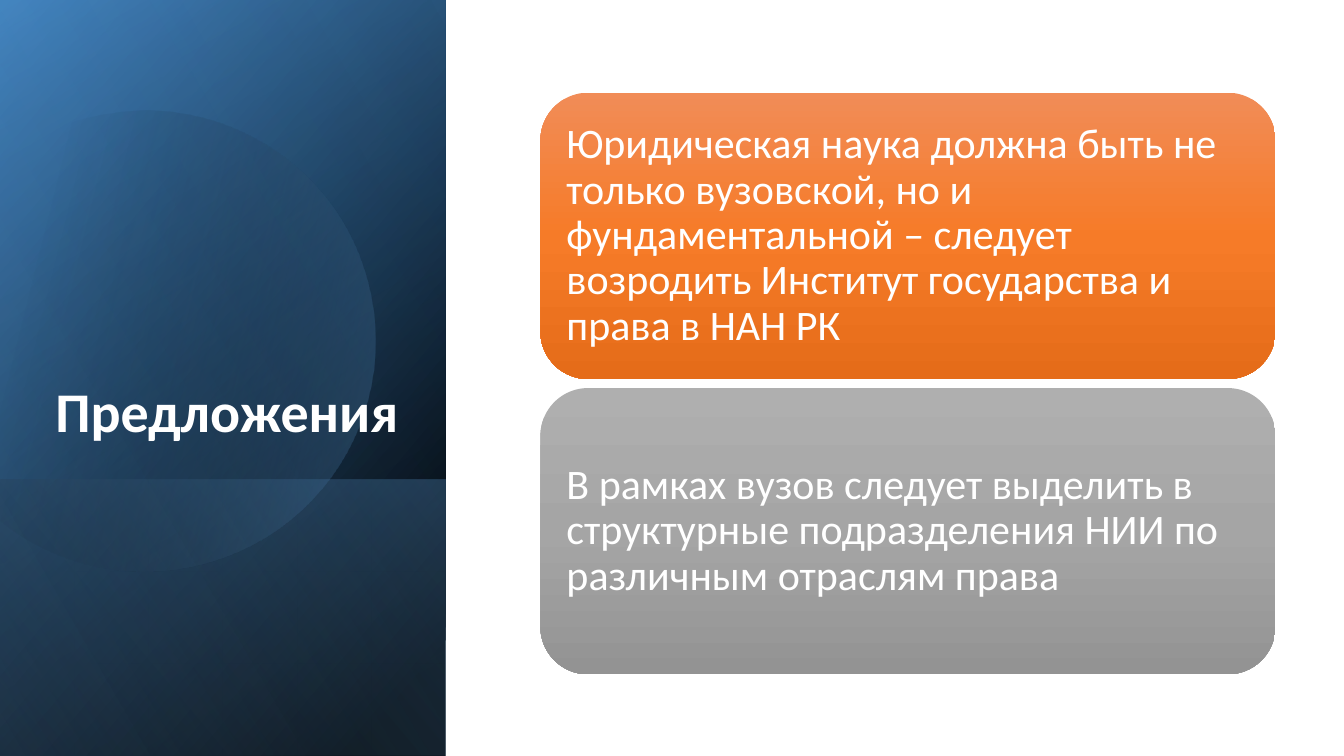
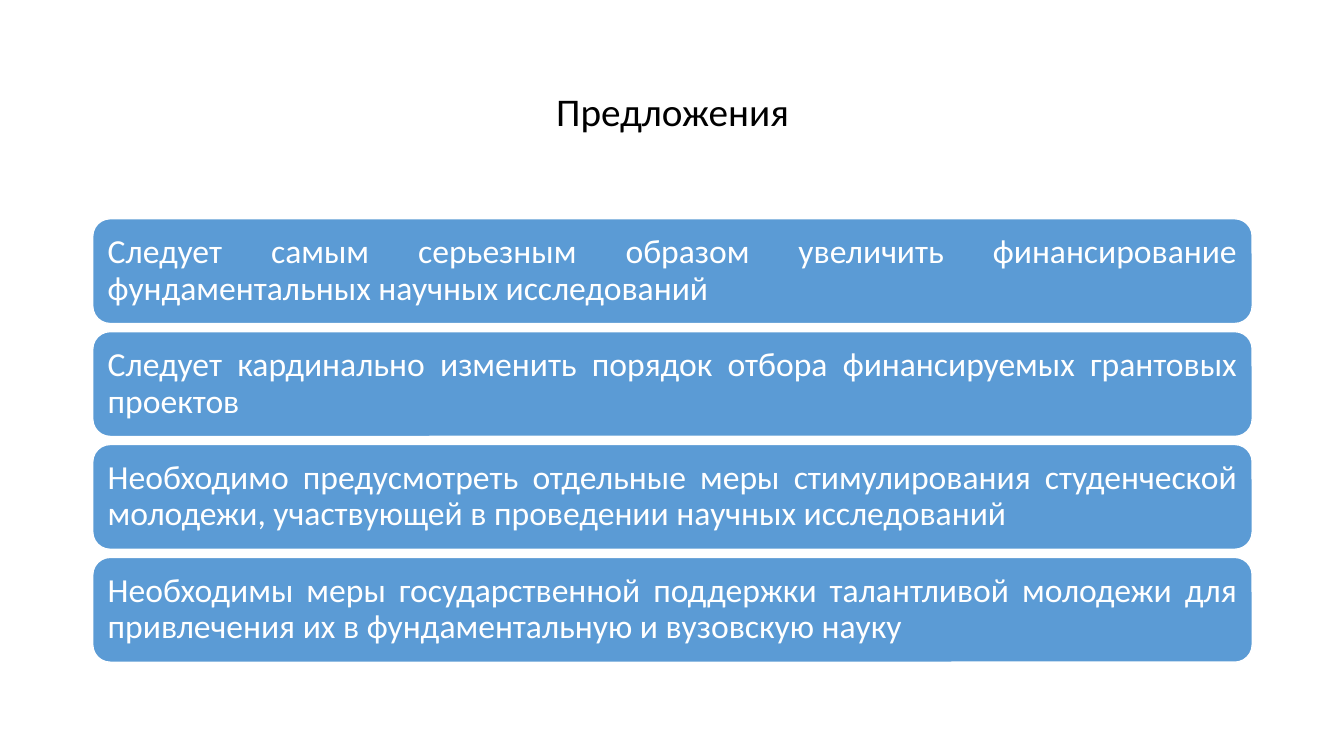
"""Build two slides of proposals: a decorated title panel with cards, and a stack of rows."""
from dataclasses import dataclass
from math import cos, radians, sin

from lxml.etree import SubElement
from pptx import Presentation
from pptx.dml.color import RGBColor
from pptx.enum.shapes import MSO_SHAPE
from pptx.enum.text import MSO_ANCHOR as ANCHOR, MSO_AUTO_SIZE, PP_ALIGN as ALIGN
from pptx.oxml.ns import qn
from pptx.shapes.autoshape import Shape
from pptx.slide import Slide
from pptx.text.text import TextFrame
from pptx.util import Inches, Pt

Point = tuple[float, float]


@dataclass(frozen=True)
class Theme:
    font: str = "Calibri"
    white: str = "FFFFFF"
    black: str = "000000"
    blue: str = "5B9BD5"
    deep_blue: str = "2E75B6"
    pale_blue: str = "9DC3E6"
    panel_title: int = 40
    plain_title: int = 28
    card: int = 30
    row: int = 24
    line_spacing: float = 0.9


@dataclass(frozen=True)
class Box:
    left: float
    top: float
    width: float
    height: float

    def lengths(self) -> tuple[int, int, int, int]:
        return Inches(self.left), Inches(self.top), Inches(self.width), Inches(self.height)


@dataclass(frozen=True)
class Stop:
    pos: int
    color: str
    alpha: int = 100


@dataclass(frozen=True)
class Gradient:
    angle: int
    stops: tuple[Stop, ...]


@dataclass(frozen=True)
class Panel:
    box: Box
    gradient: Gradient


@dataclass(frozen=True)
class TextStyle:
    size: int
    color: str
    align: ALIGN = ALIGN.LEFT
    anchor: ANCHOR = ANCHOR.MIDDLE
    bold: bool = False


@dataclass(frozen=True)
class Card:
    text: str
    gradient: Gradient


THEME = Theme()
TITLE = "Предложения"

SIDE = Box(-1.54, 1.54, 7.5, 4.42)
PANELS = (
    Panel(SIDE, Gradient(50, (Stop(8, THEME.black), Stop(100, THEME.deep_blue)))),
    Panel(SIDE, Gradient(30, (Stop(0, THEME.black, 0), Stop(99, THEME.blue, 46)))),
    Panel(Box(0.84, 3.92, 2.74, 4.42),
          Gradient(130, (Stop(2, THEME.blue, 29), Stop(100, THEME.black, 30)))),
)
GLAZE = Panel(SIDE, Gradient(120, (Stop(0, THEME.black, 0), Stop(99, THEME.pale_blue, 11))))

DISC_GRADIENT = Gradient(30, (Stop(29, THEME.black, 0), Stop(100, THEME.blue, 43)))
DISC_CENTER: Point = (1.58, 3.34)
DISC_ROTATION = 343.9
DISC_START: Point = (1.49, 1.1)
DISC_RIGHT = (
    ((2.46, 1.12), (3.35, 1.77), (3.63, 2.75)),
    ((3.98, 3.97), (3.28, 5.23), (2.07, 5.58)),
    ((1.31, 5.8), (0.53, 5.61), (-0.03, 5.14)),
)
DISC_CUT: tuple[Point, ...] = ((-0.15, 5.03), (-0.15, 1.75), (0, 1.61))
DISC_LEFT = (
    ((0.23, 1.42), (0.5, 1.28), (0.8, 1.19)),
    ((1.03, 1.13), (1.26, 1.1), DISC_START),
)

CARDS = (
    Card("Юридическая наука должна быть не только вузовской, но и фундаментальной – "
         "следует возродить Институт государства и права в НАН РК",
         Gradient(90, (Stop(0, "F18C57"), Stop(50, "F67B28"), Stop(100, "E56C19")))),
    Card("В рамках вузов следует выделить в структурные подразделения НИИ "
         "по различным отраслям права",
         Gradient(90, (Stop(0, "AFAFAF"), Stop(50, "A5A5A5"), Stop(100, "939393")))),
)
FIRST_CARD = Box(5.36, 0.92, 7.29, 2.84)
CARD_PITCH = 2.93

ROWS = (
    "Следует самым серьезным образом увеличить финансирование "
    "фундаментальных научных исследований",
    "Следует кардинально изменить порядок отбора финансируемых грантовых проектов",
    "Необходимо предусмотреть отдельные меры стимулирования студенческой молодежи, "
    "участвующей в проведении научных исследований",
    "Необходимы меры государственной поддержки талантливой молодежи "
    "для привлечения их в фундаментальную и вузовскую науку",
)
FIRST_ROW = Box(0.92, 2.17, 11.5, 1.04)
ROW_PITCH = 1.12


def rgb(color: str) -> RGBColor:
    return RGBColor.from_string(color)


def stacked(first: Box, pitch: float, index: int) -> Box:
    return Box(first.left, first.top + index * pitch, first.width, first.height)


def write(tf: TextFrame, text: str, style: TextStyle) -> None:
    tf.word_wrap = True
    tf.auto_size = MSO_AUTO_SIZE.NONE
    tf.vertical_anchor = style.anchor
    p = tf.paragraphs[0]
    p.alignment = style.align
    p.line_spacing = THEME.line_spacing
    r = p.add_run()
    r.text = text
    r.font.name = THEME.font
    r.font.size = Pt(style.size)
    r.font.bold = style.bold
    r.font.color.rgb = rgb(style.color)


def paint(sp: Shape, gradient: Gradient) -> None:
    sp.shadow.inherit = False
    sp.line.fill.background()
    sp.fill.gradient()
    fill = sp.element.spPr.find(qn("a:gradFill"))
    stops = fill.find(qn("a:gsLst"))
    for old in list(stops):
        stops.remove(old)
    for stop in gradient.stops:
        gs = SubElement(stops, qn("a:gs"), pos=str(stop.pos * 1000))
        color = SubElement(gs, qn("a:srgbClr"), val=stop.color)
        if stop.alpha < 100:
            SubElement(color, qn("a:alpha"), val=str(stop.alpha * 1000))
    fill.find(qn("a:lin")).set("ang", str(gradient.angle * 60000))


def add_panel(s: Slide, panel: Panel) -> None:
    sp = s.shapes.add_shape(MSO_SHAPE.RECTANGLE, *panel.box.lengths())
    sp.rotation = 90
    sp.element.spPr.xfrm.set("flipH", "1")
    paint(sp, panel.gradient)


def curve(start: Point, segments: tuple[tuple[Point, ...], ...], steps: int = 24) -> list[Point]:
    points: list[Point] = []
    for c1, c2, end in segments:
        for t in (i / steps for i in range(1, steps + 1)):
            u = 1 - t
            points.append(tuple(u**3 * a + 3 * u * u * t * b + 3 * u * t * t * c + t**3 * d
                                for a, b, c, d in zip(start, c1, c2, end)))
        start = end
    return points


def unrotated(point: Point) -> Point:
    turn = radians(-DISC_ROTATION)
    cx, cy = DISC_CENTER
    dx, dy = point[0] - cx, point[1] - cy
    return (Inches(cx + dx * cos(turn) - dy * sin(turn)),
            Inches(cy + dx * sin(turn) + dy * cos(turn)))


def add_disc(s: Slide) -> None:
    outline = [DISC_START, *curve(DISC_START, DISC_RIGHT), *DISC_CUT,
               *curve(DISC_CUT[-1], DISC_LEFT)]
    start, *rest = map(unrotated, outline)
    builder = s.shapes.build_freeform(*start)
    builder.add_line_segments(rest, close=True)
    sp = builder.convert_to_shape()
    sp.rotation = DISC_ROTATION
    paint(sp, DISC_GRADIENT)


def add_title(s: Slide, box: Box, style: TextStyle) -> None:
    sp = s.shapes.title
    sp.left, sp.top, sp.width, sp.height = box.lengths()
    write(sp.text_frame, TITLE, style)
    s.shapes.element.append(sp.element)


def add_round_box(s: Slide, box: Box, text: str, style: TextStyle, inset: float) -> Shape:
    sp = s.shapes.add_shape(MSO_SHAPE.ROUNDED_RECTANGLE, *box.lengths())
    sp.shadow.inherit = False
    tf = sp.text_frame
    tf.margin_left = tf.margin_right = tf.margin_top = tf.margin_bottom = Inches(inset)
    write(tf, text, style)
    return sp


def build_cards(s: Slide) -> None:
    for panel in PANELS:
        add_panel(s, panel)
    add_disc(s)
    add_panel(s, GLAZE)
    add_title(s, Box(0.43, 1.84, 3.62, 2.62),
              TextStyle(THEME.panel_title, THEME.white, ALIGN.RIGHT, ANCHOR.BOTTOM, True))
    style = TextStyle(THEME.card, THEME.white)
    for i, card in enumerate(CARDS):
        sp = add_round_box(s, stacked(FIRST_CARD, CARD_PITCH, i), card.text, style, 0.12)
        paint(sp, card.gradient)


def build_rows(s: Slide) -> None:
    add_title(s, Box(0.92, 0.4, 11.5, 1.45),
              TextStyle(THEME.plain_title, THEME.black, ALIGN.CENTER))
    style = TextStyle(THEME.row, THEME.white, ALIGN.JUSTIFY)
    for i, text in enumerate(ROWS):
        sp = add_round_box(s, stacked(FIRST_ROW, ROW_PITCH, i), text, style, 0.1)
        sp.fill.solid()
        sp.fill.fore_color.rgb = rgb(THEME.blue)
        sp.line.color.rgb = rgb(THEME.white)
        sp.line.width = Pt(1)


def main() -> None:
    prs = Presentation()
    prs.slide_width, prs.slide_height = Inches(13.33), Inches(7.5)
    title_only = prs.slide_layouts.get_by_name("Title Only")
    for build in (build_cards, build_rows):
        build(prs.slides.add_slide(title_only))
    prs.save("out.pptx")


if __name__ == "__main__":
    main()
